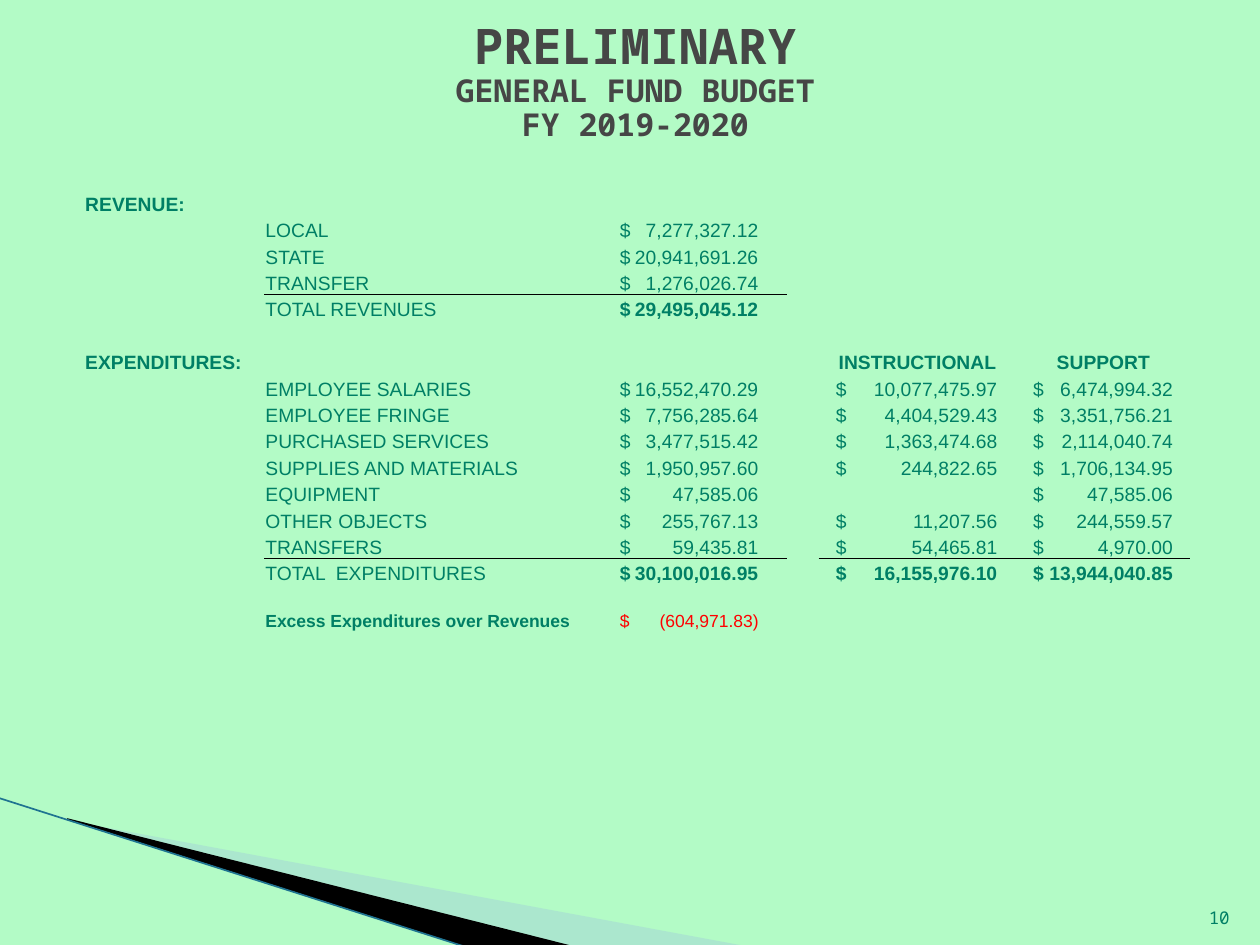
from lxml import etree
from pptx import Presentation
from pptx.dml.color import RGBColor
from pptx.enum.shapes import MSO_CONNECTOR
from pptx.enum.text import MSO_ANCHOR, PP_ALIGN
from pptx.oxml.ns import qn
from pptx.util import Pt

CENTER, RIGHT = PP_ALIGN.CENTER, PP_ALIGN.RIGHT
TOP, BOTTOM = MSO_ANCHOR.TOP, MSO_ANCHOR.BOTTOM
STRAIGHT = MSO_CONNECTOR.STRAIGHT

COLORS = {"page": "B3FBC6", "text": "007F65", "title": "464646", "black": "000000",
          "wedge": "A0CBDC", "edge": "1F7391", "deficit": "FF0000"}
SANS, MONO = "Arial", "Noto Sans Mono"
NO_GRID_STYLE = "{2D5ABB26-0587-4C30-8999-92F81FD0307C}"

COLUMN_WIDTHS = [103, 107.3, 92.2, 99.4, 18, 113, 99.4]
LABEL, TOTAL, INSTRUCTIONAL, SUPPORT = 1, 3, 5, 6
MONEY_STOPS = {TOTAL: (3.8, 79.2), INSTRUCTIONAL: (9.8, 92.4), SUPPORT: (9.6, 79.9)}
ROW_COUNT, STATEMENT_ROWS = 25, 15
REVENUE_ROW, EXPENDITURE_ROW, EXCESS_ROW = 0, 6, 16
MERGED_LABEL_ROWS = [4, 7, 8, 9, 10, 12, 14, 16, 18, 19, 20]

REVENUES = [
    ("LOCAL", "7,277,327.12"),
    ("STATE", "20,941,691.26"),
    ("TRANSFER", "1,276,026.74"),
    ("TOTAL REVENUES", "29,495,045.12"),
]
EXPENDITURES = [
    ("EMPLOYEE SALARIES", "16,552,470.29", "10,077,475.97", "6,474,994.32"),
    ("EMPLOYEE FRINGE", "7,756,285.64", "4,404,529.43", "3,351,756.21"),
    ("PURCHASED SERVICES", "3,477,515.42", "1,363,474.68", "2,114,040.74"),
    ("SUPPLIES AND MATERIALS", "1,950,957.60", "244,822.65", "1,706,134.95"),
    ("EQUIPMENT", "47,585.06", None, "47,585.06"),
    ("OTHER OBJECTS", "255,767.13", "11,207.56", "244,559.57"),
    ("TRANSFERS", "59,435.81", "54,465.81", "4,970.00"),
    ("TOTAL  EXPENDITURES", "30,100,016.95", "16,155,976.10", "13,944,040.85"),
]


def rgb(name):
    """Return the named colour."""
    return RGBColor.from_string(COLORS[name])


def add_run(paragraph, text, size, color="text", bold=False, font=SANS):
    """Append one formatted run."""
    run = paragraph.add_run()
    run.text = text
    run.font.size, run.font.name, run.font.bold = Pt(size), font, bold
    run.font.color.rgb = rgb(color)


def add_text_box(slide, box, anchor, align, top_inset=3.6):
    """Add a wrapping text box and return its first paragraph."""
    frame = slide.shapes.add_textbox(*map(Pt, box)).text_frame
    frame.word_wrap, frame.vertical_anchor = True, anchor
    frame.margin_top = Pt(top_inset)
    frame.paragraphs[0].alignment = align
    return frame.paragraphs[0]


def add_wedge(slide, points, color, opacity=100):
    """Draw a filled polygon without outline."""
    builder = slide.shapes.build_freeform(Pt(points[0][0]), Pt(points[0][1]))
    builder.add_line_segments([(Pt(x), Pt(y)) for x, y in points[1:]])
    wedge = builder.convert_to_shape()
    wedge.shadow.inherit = False
    wedge.fill.solid()
    wedge.fill.fore_color.rgb = rgb(color)
    wedge.line.fill.background()
    if opacity < 100:
        srgb = wedge.fill._xPr.find(".//" + qn("a:srgbClr"))
        etree.SubElement(srgb, qn("a:alpha"), val=str(opacity * 1000))


def add_corner(slide, left, top):
    """Draw the wedges and the edge line in the lower left corner."""
    def place(points):
        return [(left + x, top + y) for x, y in points]

    add_wedge(slide, place([(39.6, 13), (428.4, 85), (328.3, 85), (39.6, 12.3)]), "wedge", 40)
    add_wedge(slide, place([(38.2, 11.5), (329, 85), (267.8, 85.4), (38.9, 12.3)]), "black")
    start, end = place([(-0.7, 0), (267.1, 85.4)])
    edge = slide.shapes.add_connector(STRAIGHT, *map(Pt, start + end))
    edge.line.color.rgb, edge.line.width = rgb("edge"), Pt(0.95)
    etree.SubElement(edge._element.spPr, qn("a:effectLst"))


def add_title(slide, box):
    """Write the three title lines."""
    title = add_text_box(slide, box, TOP, CENTER, 12.5)
    title.line_spacing = 0.9
    lines = [("PRELIMINARY", 28), ("GENERAL FUND BUDGET", 18), ("FY 2019-2020", 18)]
    for index, (text, size) in enumerate(lines):
        if index:
            title.add_line_break()
        add_run(title, text, size, "title", True, MONO)


def add_page_number(slide, box):
    """Write the page number."""
    add_run(add_text_box(slide, box, BOTTOM, RIGHT), "10", 10, font=MONO)


def write_money(cell, column, amount, size=11, color="text", bold=False):
    """Write a dollar sign and an amount aligned on a right tab."""
    inset, stop = MONEY_STOPS[column]
    cell.margin_left = Pt(inset)
    paragraph = cell.text_frame.paragraphs[0]
    tabs = etree.SubElement(paragraph._p.get_or_add_pPr(), qn("a:tabLst"))
    etree.SubElement(tabs, qn("a:tab"), pos=str(Pt(stop)), algn="r")
    add_run(paragraph, "$\t" + amount, size, color, bold)


def rule_below(cell):
    """Draw a thin black bottom border."""
    border = etree.Element(qn("a:lnB"), w=str(Pt(0.5)))
    fill = etree.SubElement(border, qn("a:solidFill"))
    etree.SubElement(fill, qn("a:srgbClr"), val=COLORS["black"])
    cell._tc.get_or_add_tcPr().insert(0, border)


def write_section(table, first_row, entries):
    """Fill one group of lines, with a rule above its total."""
    for row, (label, *amounts) in enumerate(entries, first_row):
        is_total = row == first_row + len(entries) - 1
        add_run(table.cell(row, LABEL).text_frame.paragraphs[0], label, 11)
        for column, amount in zip(MONEY_STOPS, amounts):
            if amount:
                write_money(table.cell(row, column), column, amount, bold=is_total)
    last_item = first_row + len(entries) - 2
    for column in [LABEL, *list(MONEY_STOPS)[:len(entries[0]) - 1]]:
        rule_below(table.cell(last_item, column))


def add_budget(slide, left, top, width, height):
    """Build the budget table."""
    box = map(Pt, (left, top, width, height))
    table = slide.shapes.add_table(ROW_COUNT, len(COLUMN_WIDTHS), *box).table
    table.first_row = table.horz_banding = False
    table._tbl.tblPr.find(qn("a:tableStyleId")).text = NO_GRID_STYLE
    for column, column_width in zip(table.columns, COLUMN_WIDTHS):
        column.width = Pt(column_width)
    for index, row in enumerate(table.rows):
        row.height = Pt(15.1 if index < STATEMENT_ROWS else 13.2)
    for cell in table.iter_cells():
        cell.fill.background()
        cell.vertical_anchor = BOTTOM
        cell.margin_left = cell.margin_right = cell.margin_top = Pt(0.72)
        cell.margin_bottom = 0
        etree.SubElement(cell.text_frame.paragraphs[0]._p, qn("a:endParaRPr"), sz="1000")
    for row in MERGED_LABEL_ROWS:
        table.cell(row, LABEL).merge(table.cell(row, LABEL + 1))
    table.cell(EXPENDITURE_ROW, 0).merge(table.cell(EXPENDITURE_ROW, 1))

    headings = [(REVENUE_ROW, 0, "REVENUE:"), (EXPENDITURE_ROW, 0, "EXPENDITURES:"),
                (EXPENDITURE_ROW, INSTRUCTIONAL, "INSTRUCTIONAL"),
                (EXPENDITURE_ROW, SUPPORT, "SUPPORT")]
    for row, column, text in headings:
        heading = table.cell(row, column).text_frame.paragraphs[0]
        if column:
            heading.alignment = CENTER
        add_run(heading, text, 11, bold=True)
    write_section(table, REVENUE_ROW + 1, REVENUES)
    write_section(table, EXPENDITURE_ROW + 1, EXPENDITURES)
    excess = table.cell(EXCESS_ROW, LABEL).text_frame.paragraphs[0]
    add_run(excess, "Excess Expenditures over Revenues", 10, bold=True)
    write_money(table.cell(EXCESS_ROW, TOTAL), TOTAL, "(604,971.83)", 10, "deficit")


def main():
    """Build and save the budget slide."""
    deck = Presentation()
    deck.slide_width, deck.slide_height = Pt(720), Pt(540)
    slide = deck.slides.add_slide(deck.slide_layouts[6])
    slide.background.fill.solid()
    slide.background.fill.fore_color.rgb = rgb("page")
    add_corner(slide, 0, 456)
    add_page_number(slide, (681, 505, 28.8, 28.8))
    add_title(slide, (48, 0, 630, 90))
    add_budget(slide, 48, 108, 632.3, 358.5)
    deck.save("out.pptx")


if __name__ == "__main__":
    main()
